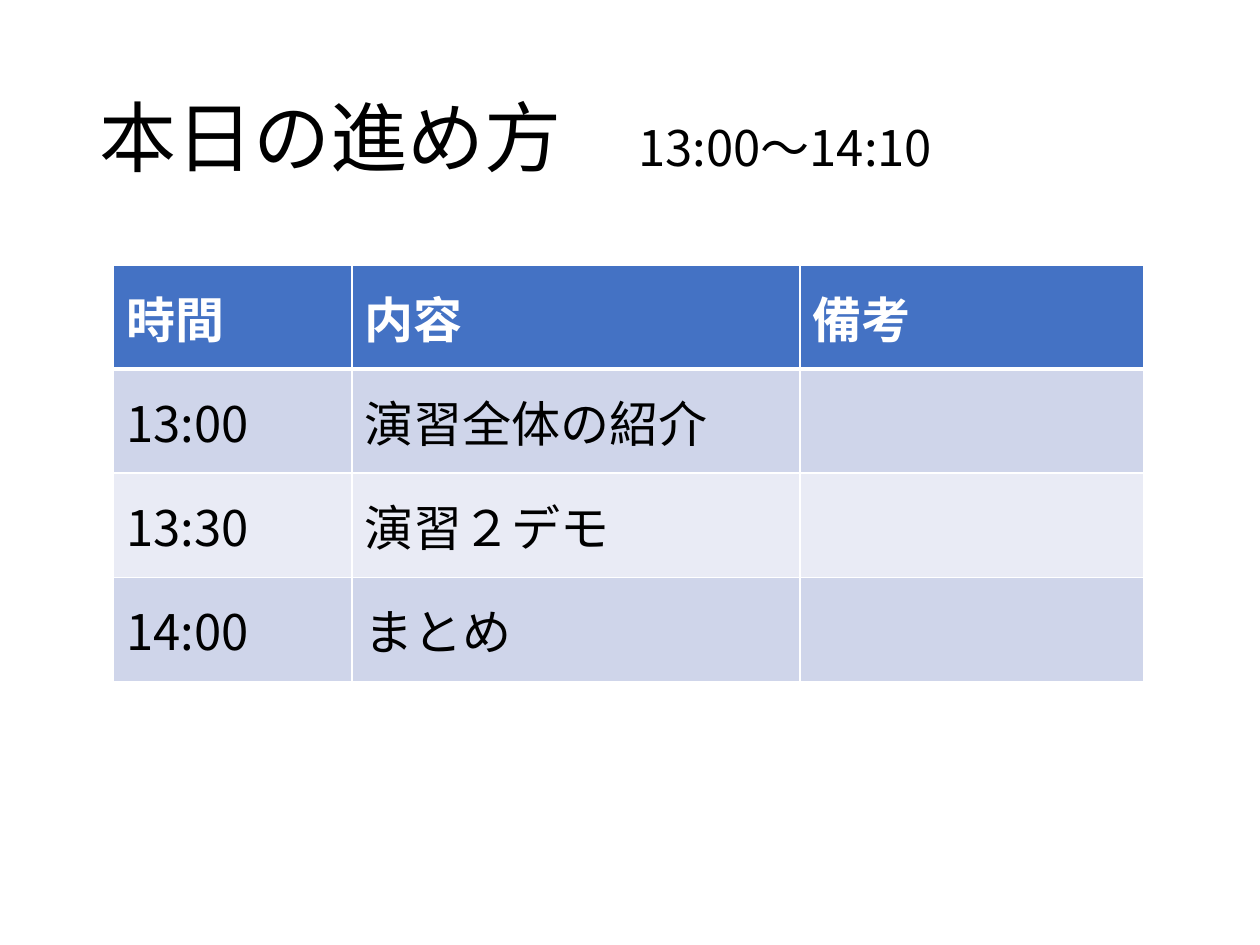
"""Build the agenda slide: a title with the time span above a timetable."""
from lxml.etree import SubElement
from pptx import Presentation
from pptx.dml.color import RGBColor
from pptx.enum.text import MSO_ANCHOR
from pptx.oxml.ns import qn
from pptx.util import Cm, Pt

FONT = "Noto Sans CJK JP"
BLACK = RGBColor(0x00, 0x00, 0x00)
WHITE = RGBColor(0xFF, 0xFF, 0xFF)
BLUE = RGBColor(0x44, 0x72, 0xC4)
BAND_DARK = RGBColor(0xCF, 0xD5, 0xEA)
BAND_LIGHT = RGBColor(0xE9, 0xEB, 0xF5)

TITLE = [("本日の進め方　", 44), ("13:00～14:10", 28)]
AGENDA = [
    ("時間", "内容", "備考"),
    ("13:00", "演習全体の紹介", ""),
    ("13:30", "演習２デモ", ""),
    ("14:00", "まとめ", ""),
]
COL_WIDTHS = [4.81, 9.03, 6.93]
ROW_HEIGHT = 2.1


def add_run(p, text, size, color, bold=False):
    r = p.add_run()
    r.text = text
    r.font.name = FONT
    r.font.size = Pt(size)
    r.font.bold = bold
    r.font.color.rgb = color
    SubElement(r.font._element, qn("a:ea"), typeface=FONT)


def add_border(cell, side, width):
    ln = SubElement(cell._tc.get_or_add_tcPr(), qn(f"a:ln{side}"), w=str(Pt(width)))
    fill = SubElement(ln, qn("a:solidFill"))
    SubElement(fill, qn("a:srgbClr"), val=str(WHITE))


def add_title(s):
    tf = s.shapes.add_textbox(Cm(1.75), Cm(1.01), Cm(21.9), Cm(3.68)).text_frame
    tf.word_wrap = True
    tf.vertical_anchor = MSO_ANCHOR.MIDDLE
    p = tf.paragraphs[0]
    p.line_spacing = 0.9
    for text, size in TITLE:
        add_run(p, text, size, BLACK)


def add_agenda(s):
    tbl = s.shapes.add_table(
        len(AGENDA), len(COL_WIDTHS), Cm(2.29), Cm(5.34),
        Cm(sum(COL_WIDTHS)), Cm(ROW_HEIGHT * len(AGENDA))).table
    for col, width in zip(tbl.columns, COL_WIDTHS):
        col.width = Cm(width)
    for i, texts in enumerate(AGENDA):
        tbl.rows[i].height = Cm(ROW_HEIGHT)
        header = i == 0
        band = BLUE if header else (BAND_LIGHT, BAND_DARK)[i % 2]
        for j, text in enumerate(texts):
            cell = tbl.cell(i, j)
            cell.vertical_anchor = MSO_ANCHOR.MIDDLE
            for side in "LRTB":
                thick = (i, side) in ((0, "B"), (1, "T"))
                add_border(cell, side, 3 if thick else 1)
            cell.fill.solid()
            cell.fill.fore_color.rgb = band
            if text:
                color = WHITE if header else BLACK
                add_run(cell.text_frame.paragraphs[0], text, 28, color, header)


def main():
    prs = Presentation()
    prs.slide_width, prs.slide_height = Cm(25.4), Cm(19.05)
    s = prs.slides.add_slide(prs.slide_layouts[6])
    add_title(s)
    add_agenda(s)
    prs.save("out.pptx")


if __name__ == "__main__":
    main()
